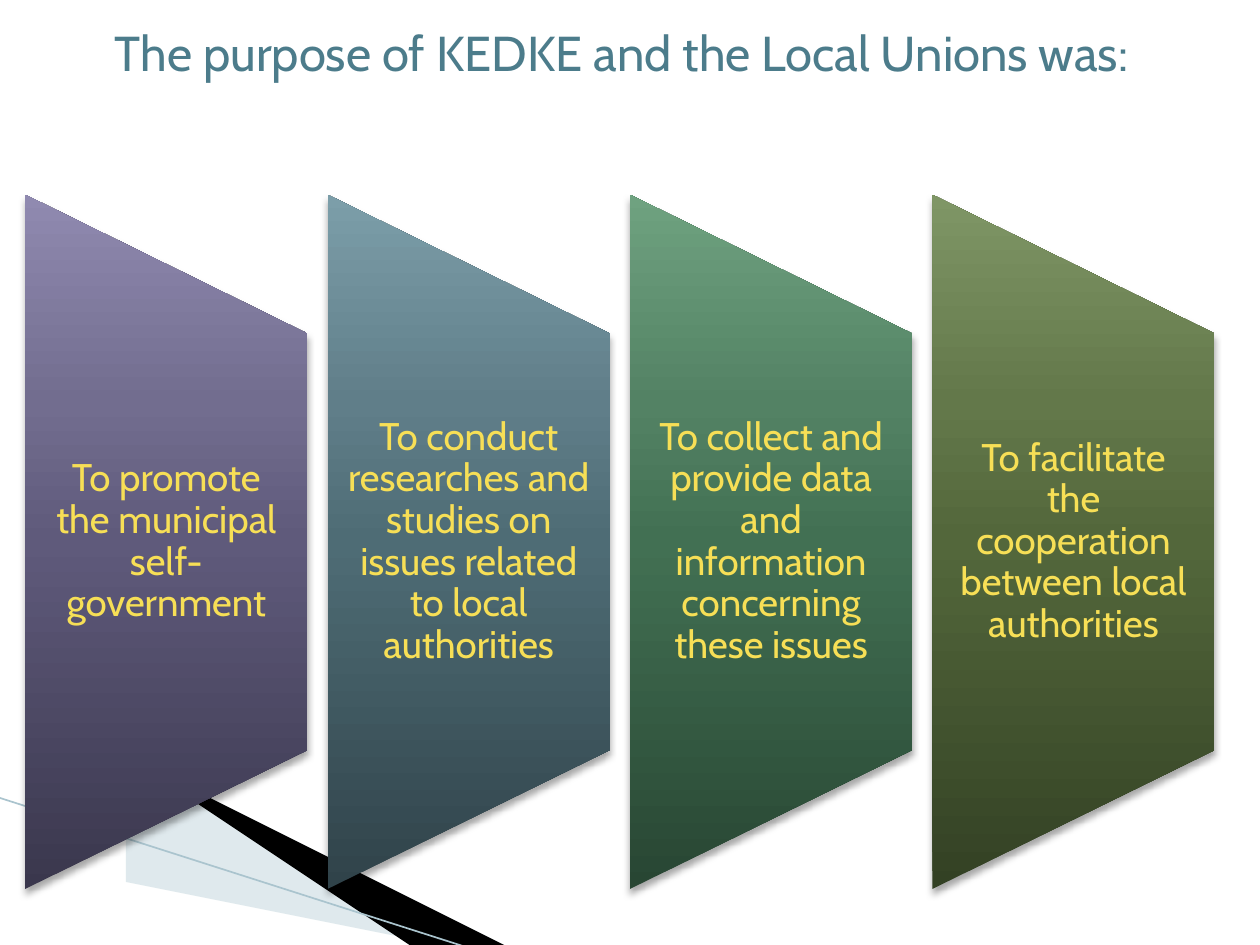
from dataclasses import dataclass

from lxml import etree
from pptx import Presentation
from pptx.dml.color import RGBColor
from pptx.enum.shapes import MSO_CONNECTOR, MSO_SHAPE
from pptx.enum.text import MSO_ANCHOR, MSO_AUTO_SIZE, PP_ALIGN
from pptx.oxml import parse_xml
from pptx.oxml.ns import nsdecls, qn
from pptx.util import Inches, Pt

STRAIGHT = MSO_CONNECTOR.STRAIGHT
TRAPEZOID = MSO_SHAPE.FLOWCHART_MANUAL_OPERATION
TOP, MIDDLE = MSO_ANCHOR.TOP, MSO_ANCHOR.MIDDLE
CENTER = PP_ALIGN.CENTER
FIXED_SIZE = MSO_AUTO_SIZE.NONE
TITLE_ONLY = 5


@dataclass(frozen=True)
class Theme:
    font: str = "Cabin"
    title: str = "4C7C8B"
    panel_text: str = "F7DF56"
    wedge: str = "000000"
    pale_wedge: str = "B1C9D2"
    edge: str = "AAC4CE"
    title_size: float = 28
    panel_size: float = 22
    edge_width: float = 0.95


@dataclass(frozen=True)
class Grid:
    left: float = 0.2
    pitch: float = 2.4
    width: float = 2.24
    height: float = 5.51
    middle: float = 4.3
    text_height: float = 3.31

    def column(self, index: int) -> float:
        return self.left + index * self.pitch


@dataclass(frozen=True)
class Purpose:
    text: str
    shades: tuple[str, str, str, str]


THEME = Theme()
GRID = Grid()
SHADE_STOPS = (0, 50, 70, 100)
PURPOSES = (
    Purpose("To promote the municipal self-government",
            ("3A374D", "5F5A7B", "726D8F", "908AB0")),
    Purpose("To conduct researches and studies on issues related to local authorities",
            ("30434A", "4E6C75", "607E89", "7C9EA9")),
    Purpose("To collect and provide data and information concerning these issues",
            ("284633", "427053", "538264", "6FA280")),
    Purpose("To facilitate the cooperation between local authorities",
            ("334124", "53673B", "63784A", "7F9666")),
)


def write_text(frame, text: str, size: float, color: str, anchor, side: float, top: float) -> None:
    frame.word_wrap = True
    frame.auto_size = FIXED_SIZE
    frame.vertical_anchor = anchor
    frame.margin_left = frame.margin_right = Inches(side)
    frame.margin_top = frame.margin_bottom = Inches(top)
    paragraph = frame.paragraphs[0]
    paragraph.alignment = CENTER
    run = paragraph.add_run()
    run.text = text
    run.font.name = THEME.font
    run.font.size = Pt(size)
    run.font.color.rgb = RGBColor.from_string(color)


def add_wedge(slide, corners: tuple, color: str, opacity: int) -> None:
    builder = slide.shapes.build_freeform(*corners[0], scale=Inches(1))
    builder.add_line_segments(corners[1:], close=True)
    wedge = builder.convert_to_shape()
    wedge.shadow.inherit = False
    wedge.fill.solid()
    wedge.fill.fore_color.rgb = RGBColor.from_string(color)
    wedge.line.fill.background()
    tint = wedge.fill._xPr.find(qn("a:solidFill"))[0]
    etree.SubElement(tint, qn("a:alpha"), val=str(opacity * 1000))


def add_edge(slide, start: tuple[float, float], end: tuple[float, float]) -> None:
    edge = slide.shapes.add_connector(STRAIGHT, *map(Inches, start + end))
    edge.line.color.rgb = RGBColor.from_string(THEME.edge)
    edge.line.width = Pt(THEME.edge_width)
    etree.SubElement(edge._element.spPr, qn("a:effectLst"))


def style_panel(panel, shades: tuple[str, ...]) -> None:
    stops = "".join(
        f'<a:gs pos="{stop * 1000}"><a:srgbClr val="{shade}"/></a:gs>'
        for stop, shade in zip(SHADE_STOPS, shades)
    )
    properties = panel._element.spPr
    properties.append(parse_xml(
        f'<a:gradFill {nsdecls("a")} rotWithShape="0"><a:gsLst>{stops}</a:gsLst>'
        '<a:lin ang="16200000" scaled="0"/></a:gradFill>'
    ))
    panel.line.fill.background()
    properties.append(parse_xml(
        f'<a:effectLst {nsdecls("a")}><a:outerShdw blurRad="{Pt(4)}" dist="{Pt(3)}" '
        'dir="5400000" rotWithShape="0"><a:srgbClr val="000000"><a:alpha val="35000"/>'
        '</a:srgbClr></a:outerShdw></a:effectLst>'
    ))


def add_purpose(slide, index: int, purpose: Purpose) -> None:
    left = GRID.column(index)
    panel = slide.shapes.add_shape(
        TRAPEZOID,
        Inches(left + (GRID.width - GRID.height) / 2),
        Inches(GRID.middle - GRID.width / 2),
        Inches(GRID.height),
        Inches(GRID.width),
    )
    panel.rotation = 270
    style_panel(panel, purpose.shades)
    label = slide.shapes.add_textbox(
        Inches(left),
        Inches(GRID.middle - GRID.text_height / 2),
        Inches(GRID.width),
        Inches(GRID.text_height),
    )
    write_text(label.text_frame, purpose.text, THEME.panel_size, THEME.panel_text, MIDDLE, 0.15, 0)
    label.text_frame.paragraphs[0].line_spacing = 0.9


def main() -> None:
    deck = Presentation()
    deck.slide_width, deck.slide_height = Inches(10), Inches(7.5)
    slide = deck.slides.add_slide(deck.slide_layouts[TITLE_ONLY])

    add_wedge(slide, ((0.55, 6.51), (5.95, 7.51), (4.56, 7.51), (0.55, 6.5)), THEME.pale_wedge, 40)
    add_wedge(slide, ((0.53, 6.49), (4.57, 7.51), (3.72, 7.52), (0.54, 6.5)), THEME.wedge, 100)
    add_edge(slide, (-0.01, 6.33), (3.71, 7.52))

    title = slide.shapes.title
    title.left, title.top, title.width, title.height = map(Inches, (0.43, 0.13, 9, 0.87))
    write_text(title.text_frame, "The purpose of KEDKE and the Local Unions was:",
               THEME.title_size, THEME.title, TOP, 0.1, 0.05)

    for index, purpose in enumerate(PURPOSES):
        add_purpose(slide, index, purpose)

    deck.save("out.pptx")


if __name__ == "__main__":
    main()
